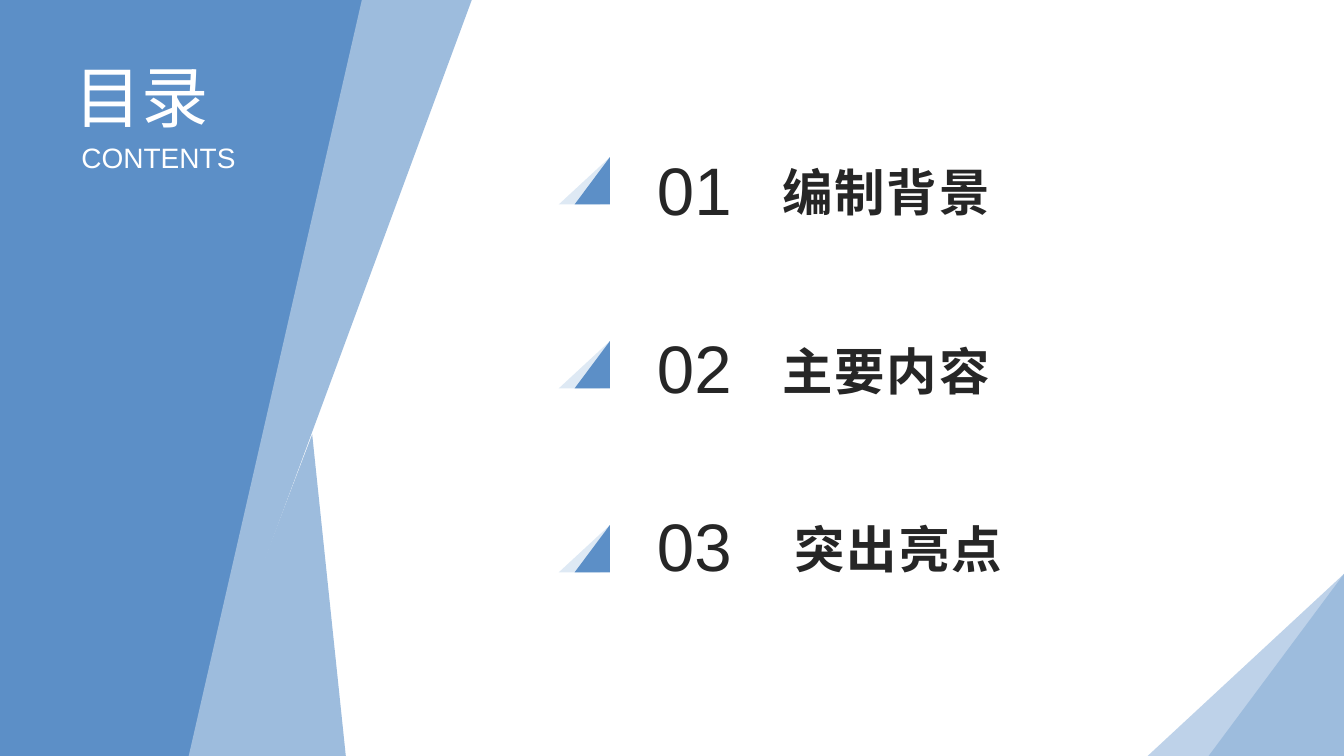
from dataclasses import dataclass

from pptx import Presentation
from pptx.dml.color import RGBColor
from pptx.enum import shapes, text
from pptx.util import Pt


@dataclass(frozen=True)
class Theme:
    font: str = "Arial"
    blue: str = "5C8FC7"
    mid: str = "9DBCDD"
    light: str = "BED2E9"
    pale: str = "DEE9F4"
    white: str = "FFFFFF"
    ink: str = "262626"
    title: int = 48
    subtitle: int = 20
    number: int = 48
    item: int = 36


THEME = Theme()
ITEMS = [("编制背景", 551.5), ("主要内容", 551.5), ("突出亮点", 560.2)]


def paint(sp, color):
    sp.fill.solid()
    sp.fill.fore_color.rgb = RGBColor.from_string(color)
    sp.line.fill.background()
    sp.shadow.inherit = False


def add_polygon(slide, points, color):
    corners = [(Pt(x), Pt(y)) for x, y in points]
    builder = slide.shapes.build_freeform(*corners[0])
    builder.add_line_segments(corners[1:], close=True)
    paint(builder.convert_to_shape(), color)


def add_peak(slide, right, top, width, height, front, back):
    """Right-angled triangle with a paler sliver behind it."""
    bottom = top + height
    add_polygon(slide, [(right, top), (right - 0.28 * width, bottom),
                        (right - 1.45 * width, bottom)], back)
    sp = slide.shapes.add_shape(shapes.MSO_SHAPE.ISOSCELES_TRIANGLE,
                                Pt(right - width), Pt(top), Pt(width), Pt(height))
    sp.adjustments[0] = 1
    paint(sp, front)


def write(sp, words, size, color, bold=False, spacing=0,
          anchor=text.MSO_ANCHOR.TOP):
    tf = sp.text_frame
    tf.word_wrap = True
    tf.auto_size = text.MSO_AUTO_SIZE.NONE
    tf.vertical_anchor = anchor
    p = tf.paragraphs[0]
    p.alignment = text.PP_ALIGN.LEFT
    r = p.add_run()
    r.text = words
    r.font.name = THEME.font
    r.font.size = Pt(size)
    r.font.bold = bold
    r.font.color.rgb = RGBColor.from_string(color)
    if spacing:
        r._r.get_or_add_rPr().set("spc", str(int(spacing * 100)))


def add_text(slide, box, *args, **kwargs):
    write(slide.shapes.add_textbox(*map(Pt, box)), *args, **kwargs)


def add_title(slide, box, words):
    sp = slide.shapes.title
    sp.left, sp.top, sp.width, sp.height = map(Pt, box)
    write(sp, words, THEME.title, THEME.white)


def add_item(slide, index, name, left):
    add_peak(slide, 435.6, 112.3 + 131.4 * index, 25.2, 33.8,
             THEME.blue, THEME.pale)
    offset = 127.4 * index
    add_text(slide, (462.2, 102.2 + offset, 71.3, 69), f"{index + 1:02d}",
             THEME.number, THEME.ink)
    add_text(slide, (left, 88.6 + offset, 220, 96.5), name, THEME.item,
             THEME.ink, bold=True, spacing=1.5, anchor=text.MSO_ANCHOR.MIDDLE)


def main():
    prs = Presentation()
    prs.slide_width, prs.slide_height = Pt(960), Pt(540)
    slide = prs.slides.add_slide(prs.slide_layouts[5])

    # Corner decoration
    add_peak(slide, 960, 410, 96.7, 130, THEME.mid, THEME.light)

    # Left panel and its folded bands, the lower one overlapping the upper
    add_polygon(slide, [(0, 0), (260.6, 0), (135.4, 540), (0, 540)], THEME.blue)
    add_polygon(slide, [(337, 0), (137.5, 540), (134.8, 540), (258.5, 0)], THEME.mid)
    add_polygon(slide, [(223, 310.3), (247, 540), (135.4, 540)], THEME.mid)

    # Heading, brought in front of the panel
    add_title(slide, (46.2, 36, 120, 65.5), "目录")
    slide.shapes._spTree.append(slide.shapes.title._element)
    add_text(slide, (51, 96.5, 126, 31.7), "CONTENTS", THEME.subtitle, THEME.white)

    # Contents list
    for index, (name, left) in enumerate(ITEMS):
        add_item(slide, index, name, left)

    prs.save("out.pptx")


if __name__ == "__main__":
    main()
